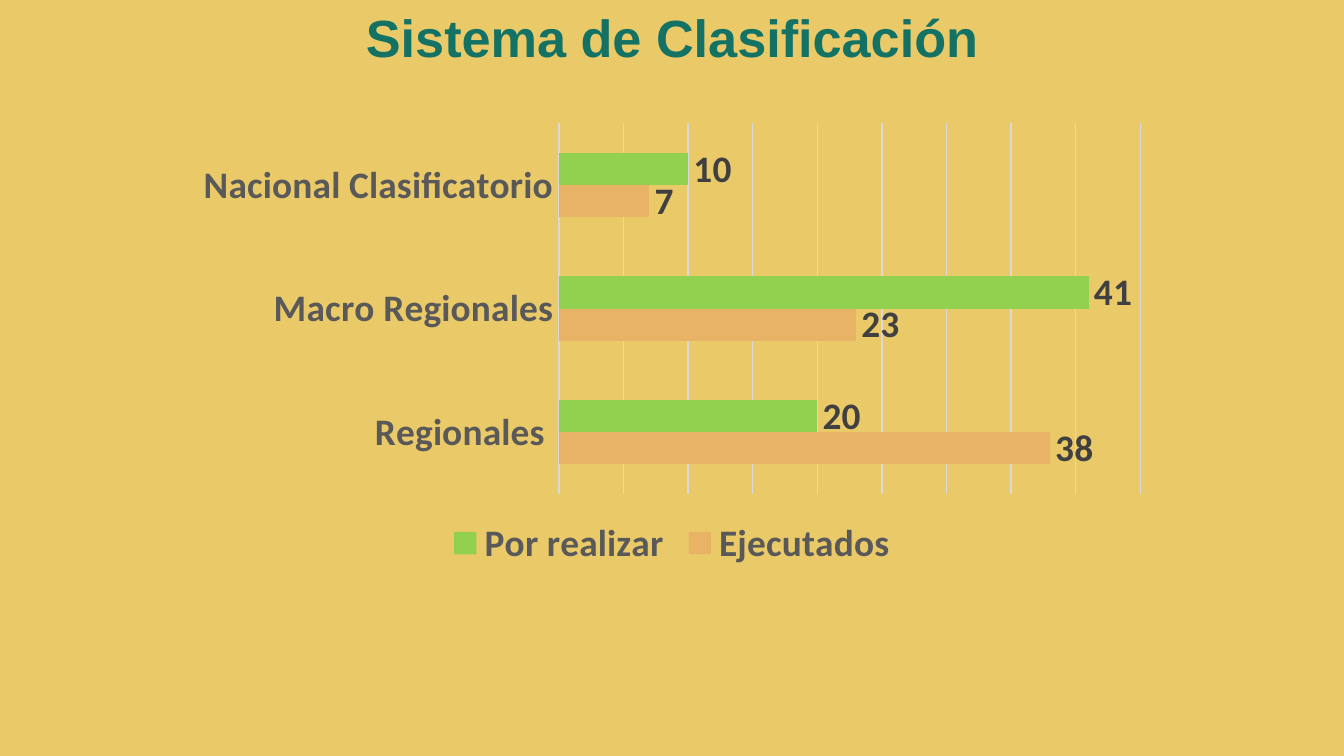
from pptx import Presentation
from pptx.chart.data import CategoryChartData
from pptx.dml.color import RGBColor
from pptx.enum.chart import XL_CHART_TYPE, XL_LABEL_POSITION, XL_LEGEND_POSITION, XL_TICK_MARK
from pptx.enum.text import MSO_ANCHOR, PP_ALIGN
from pptx.util import Inches, Pt

COLORS = {
    "background": "EAC968",
    "title": "147265",
    "axis": "595959",
    "label": "404040",
    "grid": "D9D9D9",
    "Ejecutados": "E9B365",
    "Por realizar": "92D050",
}
SLIDE_WIDTH = Inches(10)
SLIDE_HEIGHT = SLIDE_WIDTH * 9 // 16
STAGES = ["Regionales ", "Macro Regionales", "Nacional Clasificatorio"]
EVENTS = {"Ejecutados": [38, 23, 7], "Por realizar": [20, 41, 10]}
TITLE_FONT = {"name": "Arial", "size": Pt(28), "bold": True}
CHART_FONT = {"name": "Calibri", "size": Pt(20), "bold": True}


def color(key):
    """Return the named colour."""
    return RGBColor.from_string(COLORS[key])


def apply_format(target, values):
    """Set each format value on the target."""
    for attribute, value in values.items():
        setattr(target, attribute, value)


def style_font(font, values, color_key):
    """Give a font its format values and colour."""
    apply_format(font, values)
    font.color.rgb = color(color_key)


def style_line(line):
    """Draw a thin line in the grid colour."""
    line.color.rgb = color("grid")
    line.width = Pt(0.75)


def add_title(slide, text):
    """Add the centred heading across the slide."""
    heading = slide.shapes.add_textbox(Inches(0), Inches(0.1), SLIDE_WIDTH, Inches(0.35))
    frame = heading.text_frame
    apply_format(frame, {
        "word_wrap": True,
        "vertical_anchor": MSO_ANCHOR.MIDDLE,
        "margin_left": Inches(0.07),
        "margin_right": Inches(0.07),
        "margin_top": Inches(0.04),
        "margin_bottom": Inches(0.04),
    })
    paragraph = frame.paragraphs[0]
    paragraph.alignment = PP_ALIGN.CENTER
    run = paragraph.add_run()
    run.text = text
    style_font(run.font, TITLE_FONT, "title")


def style_axes(chart):
    """Format the stage axis and the hidden value axis."""
    stages = chart.category_axis
    apply_format(stages, {
        "major_tick_mark": XL_TICK_MARK.NONE,
        "minor_tick_mark": XL_TICK_MARK.NONE,
        "has_major_gridlines": False,
    })
    style_font(stages.tick_labels.font, CHART_FONT, "axis")
    style_line(stages.format.line)
    counts = chart.value_axis
    apply_format(counts, {
        "visible": False,
        "has_major_gridlines": True,
        "minimum_scale": 0,
        "maximum_scale": 45,
        "major_unit": 5,
    })
    style_line(counts.major_gridlines.format.line)


def style_series(series):
    """Fill the bars of a series and label their values."""
    series.invert_if_negative = False
    series.format.fill.solid()
    series.format.fill.fore_color.rgb = color(series.name)
    labels = series.data_labels
    apply_format(labels, {"show_value": True, "position": XL_LABEL_POSITION.OUTSIDE_END})
    style_font(labels.font, CHART_FONT, "label")


def add_events_chart(slide):
    """Add the bar chart of events by stage."""
    events = CategoryChartData()
    events.categories = STAGES
    for name, counts in EVENTS.items():
        events.add_series(name, counts)
    chart = slide.shapes.add_chart(
        XL_CHART_TYPE.BAR_CLUSTERED,
        Inches(1.37), Inches(0.85), Inches(7.26), Inches(3.42), events,
    ).chart
    apply_format(chart, {"has_title": False, "has_legend": True})
    apply_format(chart.font, CHART_FONT)
    apply_format(chart.legend, {
        "position": XL_LEGEND_POSITION.BOTTOM, "include_in_layout": False,
    })
    style_font(chart.legend.font, CHART_FONT, "axis")
    style_axes(chart)
    plot = chart.plots[0]
    apply_format(plot, {"gap_width": 182, "overlap": 0, "vary_by_categories": False})
    for series in plot.series:
        style_series(series)


def main():
    """Build and save the slide."""
    presentation = Presentation()
    apply_format(presentation, {"slide_width": SLIDE_WIDTH, "slide_height": SLIDE_HEIGHT})
    slide = presentation.slides.add_slide(presentation.slide_layouts[6])
    slide.background.fill.solid()
    slide.background.fill.fore_color.rgb = color("background")
    add_title(slide, "Sistema de Clasificación")
    add_events_chart(slide)
    presentation.save("out.pptx")


if __name__ == "__main__":
    main()
